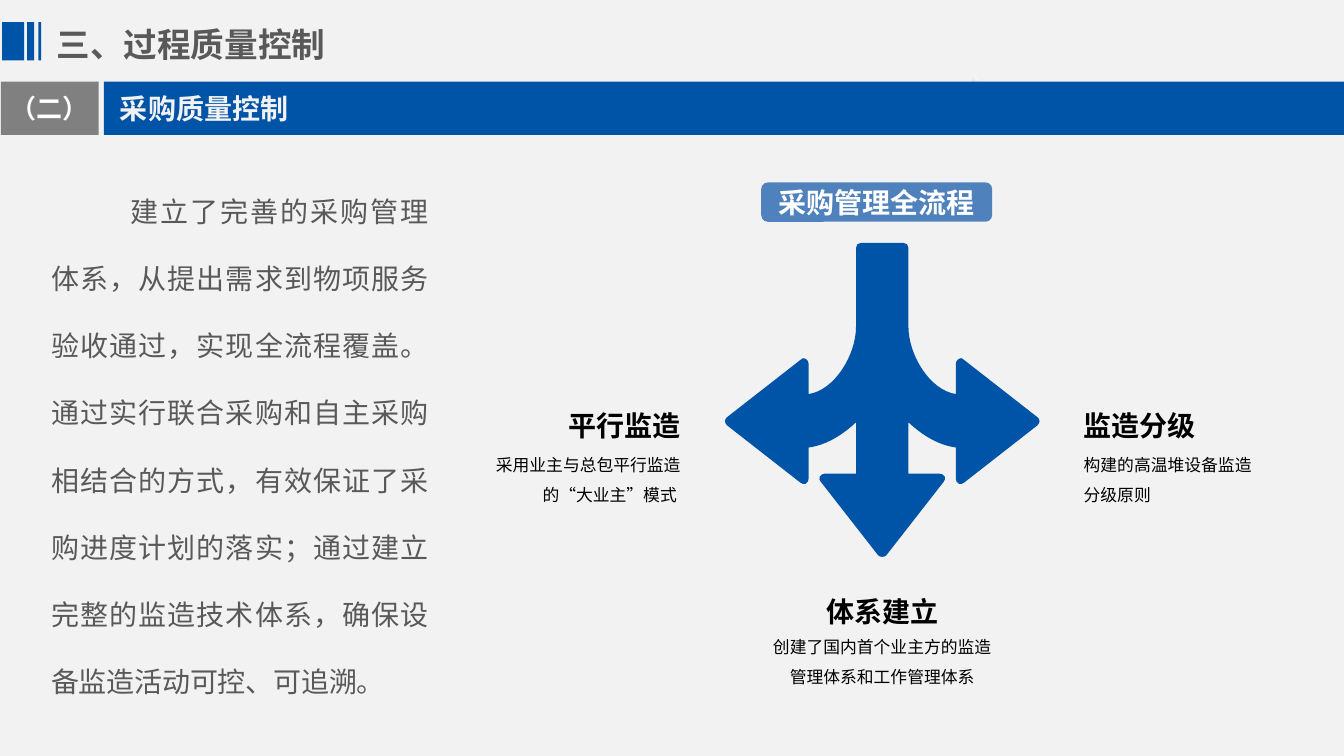
from lxml.etree import SubElement
from pptx import Presentation
from pptx.dml.color import RGBColor
from pptx.enum.shapes import MSO_SHAPE
from pptx.enum.text import MSO_ANCHOR, MSO_AUTO_SIZE, PP_ALIGN
from pptx.oxml.ns import qn
from pptx.util import Inches, Pt

BLUE, GRAY, PALE = "0054A7", "595959", "F2F2F2"
FONT = "Noto Sans CJK SC"


def paint(shape, color):
    shape.shadow.inherit = False
    shape.fill.solid()
    shape.fill.fore_color.rgb = RGBColor.from_string(color)
    shape.line.fill.background()
    return shape


def write(shape, text, size=20, color="000000", bold=True, align=PP_ALIGN.LEFT,
          anchor=MSO_ANCHOR.TOP, spacing=1.0, inset=0.1, margin=0, indent=0, tracking=0):
    frame = shape.text_frame
    frame.word_wrap = True
    frame.auto_size = MSO_AUTO_SIZE.NONE
    frame.vertical_anchor = anchor
    frame.margin_left = frame.margin_right = Inches(inset)
    frame.margin_top = frame.margin_bottom = Inches(inset / 2)
    paragraph = frame.paragraphs[0]
    paragraph.alignment = align
    paragraph.line_spacing = spacing
    properties = paragraph._p.get_or_add_pPr()
    properties.set("marL", str(Inches(margin)))
    properties.set("indent", str(Inches(indent)))
    run = paragraph.add_run()
    run.text = text
    run.font.size, run.font.bold, run.font.name = Pt(size), bold, FONT
    run.font.color.rgb = RGBColor.from_string(color)
    run_properties = run._r.get_or_add_rPr()
    SubElement(run_properties, qn("a:ea"), typeface=FONT)
    if tracking:
        run_properties.set("spc", str(int(tracking * 100)))


deck = Presentation()
deck.slide_width, deck.slide_height = Inches(13.33), Inches(7.5)
slide = deck.slides.add_slide(deck.slide_layouts[5])
shapes = slide.shapes

# Pale backdrop, sent behind the title
backdrop = paint(shapes.add_shape(MSO_SHAPE.RECTANGLE, 0, 0,
                                  deck.slide_width, deck.slide_height), PALE)
shapes.title._element.addprevious(backdrop._element)

# Title with its three bars
title = shapes.title
title.left, title.top, title.width, title.height = map(Inches, (0.49, 0.2, 7.73, 0.48))
write(title, "三、过程质量控制", size=24, color=GRAY, inset=0.07)
for left, width in ((0.02, 0.22), (0.27, 0.07), (0.38, 0.03)):
    paint(shapes.add_shape(MSO_SHAPE.RECTANGLE, Inches(left), Inches(0.22),
                           Inches(width), Inches(0.38)), BLUE)

# Faint corner above the section banner
corner = paint(shapes.add_shape(MSO_SHAPE.RIGHT_TRIANGLE, Inches(9.67), Inches(0.75),
                                Inches(0.09), Inches(0.06)), "F8F8F8")
corner_color = corner._element.spPr.find(qn("a:solidFill")).find(qn("a:srgbClr"))
SubElement(corner_color, qn("a:alpha"), val="85000")
shadow = SubElement(corner._element.spPr.find(qn("a:effectLst")), qn("a:outerShdw"),
                    blurRad=str(Pt(4)), dist=str(Pt(3)), dir="5400000")
shadow_color = SubElement(shadow, qn("a:srgbClr"), val="000000")
SubElement(shadow_color, qn("a:alpha"), val="40000")

# Section banner
banner = (
    (1.03, 12.31, BLUE, "采购质量控制", dict(color=PALE, margin=0.09)),
    (0.01, 0.97, "808080", "（二）", dict(color="FFFFFF", size=18.6, align=PP_ALIGN.CENTER)),
)
for left, width, fill, text, style in banner:
    block = paint(shapes.add_shape(MSO_SHAPE.RECTANGLE, Inches(left), Inches(0.81),
                                   Inches(width), Inches(0.53)), fill)
    write(block, text, anchor=MSO_ANCHOR.MIDDLE, inset=0.07, **style)

# Three-way arrow: right half, as lines (one point) and curves (three points),
# with x measured from the axis
AXIS, TOP, REACH = 8.75, 2.41, 1.56
right_half = [
    [(0.21, 2.41)],
    [(0.24, 2.41), (0.26, 2.43), (0.26, 2.46)],
    [(0.26, 3.24)],
    [(0.26, 3.52), (0.47, 3.87), (0.73, 3.91)],
    [(0.73, 3.61)],
    [(0.73, 3.59), (0.74, 3.57), (0.76, 3.56)],
    [(0.77, 3.55), (0.80, 3.55), (0.81, 3.57)],
    [(1.54, 4.14)],
    [(1.55, 4.15), (REACH, 4.16), (REACH, 4.18)],
    [(REACH, 4.19), (1.55, 4.21), (1.54, 4.22)],
    [(0.81, 4.79)],
    [(0.80, 4.80), (0.77, 4.81), (0.76, 4.80)],
    [(0.74, 4.79), (0.73, 4.77), (0.73, 4.75)],
    [(0.73, 4.44)],
    [(0.58, 4.42), (0.42, 4.34), (0.26, 4.19)],
    [(0.26, 4.70)],
    [(0.57, 4.70)],
    [(0.59, 4.70), (0.61, 4.71), (0.62, 4.73)],
    [(0.63, 4.74), (0.62, 4.77), (0.61, 4.78)],
    [(0.04, 5.51)],
]
tip = [(0.02, 5.53), (-0.02, 5.53), (-0.04, 5.51)]
starts = [segment[-1] for segment in right_half[:-1]]
left_half = [[(-x, y) for x, y in segment[-2::-1] + [start]]
             for start, segment in zip(starts[::-1], right_half[:0:-1])]
outline = right_half + [tip] + left_half
builder = shapes.build_freeform(Inches(AXIS - 0.21), Inches(TOP))
builder.add_line_segments([(Inches(AXIS + segment[-1][0]), Inches(segment[-1][1]))
                           for segment in outline], close=True)
arrow = paint(builder.convert_to_shape(), BLUE)
for segment, line in zip(outline, list(arrow._element.iter(qn("a:lnTo")))):
    if len(segment) == 3:
        line.tag = qn("a:cubicBezTo")
        for position, (x, y) in enumerate(segment[:2]):
            control = SubElement(line, qn("a:pt"), x=str(Inches(REACH + x)),
                                 y=str(Inches(y - TOP)))
            line.insert(position, control)

# Heading over the arrow
heading = paint(shapes.add_shape(MSO_SHAPE.ROUNDED_RECTANGLE, Inches(7.55), Inches(1.81),
                                 Inches(2.29), Inches(0.39)), "4F81BD")
write(heading, "采购管理全流程", color="FFFFFF", align=PP_ALIGN.CENTER, anchor=MSO_ANCHOR.MIDDLE)

# Label and detail at each arrowhead
branches = (
    (4.35, 4, 4.36, 2.5, 2.5, PP_ALIGN.RIGHT, "平行监造", "采用业主与总包平行监造的“大业主”模式 "),
    (10.65, 4, 4.36, 2.4, 2, PP_ALIGN.LEFT, "监造分级", "构建的高温堆设备监造分级原则"),
    (7.55, 5.85, 6.17, 2.4, 2.4, PP_ALIGN.CENTER, "体系建立",
     "创建了国内首个业主方的监造管理体系和工作管理体系"),
)
for left, label_top, detail_top, label_width, detail_width, align, label, detail in branches:
    write(shapes.add_textbox(Inches(left), Inches(label_top), Inches(label_width), Inches(0.44)),
          label, align=align)
    write(shapes.add_textbox(Inches(left), Inches(detail_top), Inches(detail_width), Inches(0.67)),
          detail, size=12, bold=False, align=align, spacing=1.5)

# Summary on the left
summary = shapes.add_textbox(Inches(0.41), Inches(1.55), Inches(3.94), Inches(5.42))
write(summary,
      "建立了完善的采购管理体系，从提出需求到物项服务验收通过，实现全流程覆盖。"
      "通过实行联合采购和自主采购相结合的方式，有效保证了采购进度计划的落实；"
      "通过建立完整的监造技术体系，确保设备监造活动可控、可追溯。",
      color=GRAY, bold=False, align=PP_ALIGN.JUSTIFY, anchor=MSO_ANCHOR.MIDDLE,
      spacing=2.0, indent=0.79, tracking=-0.2)

deck.save("out.pptx")
